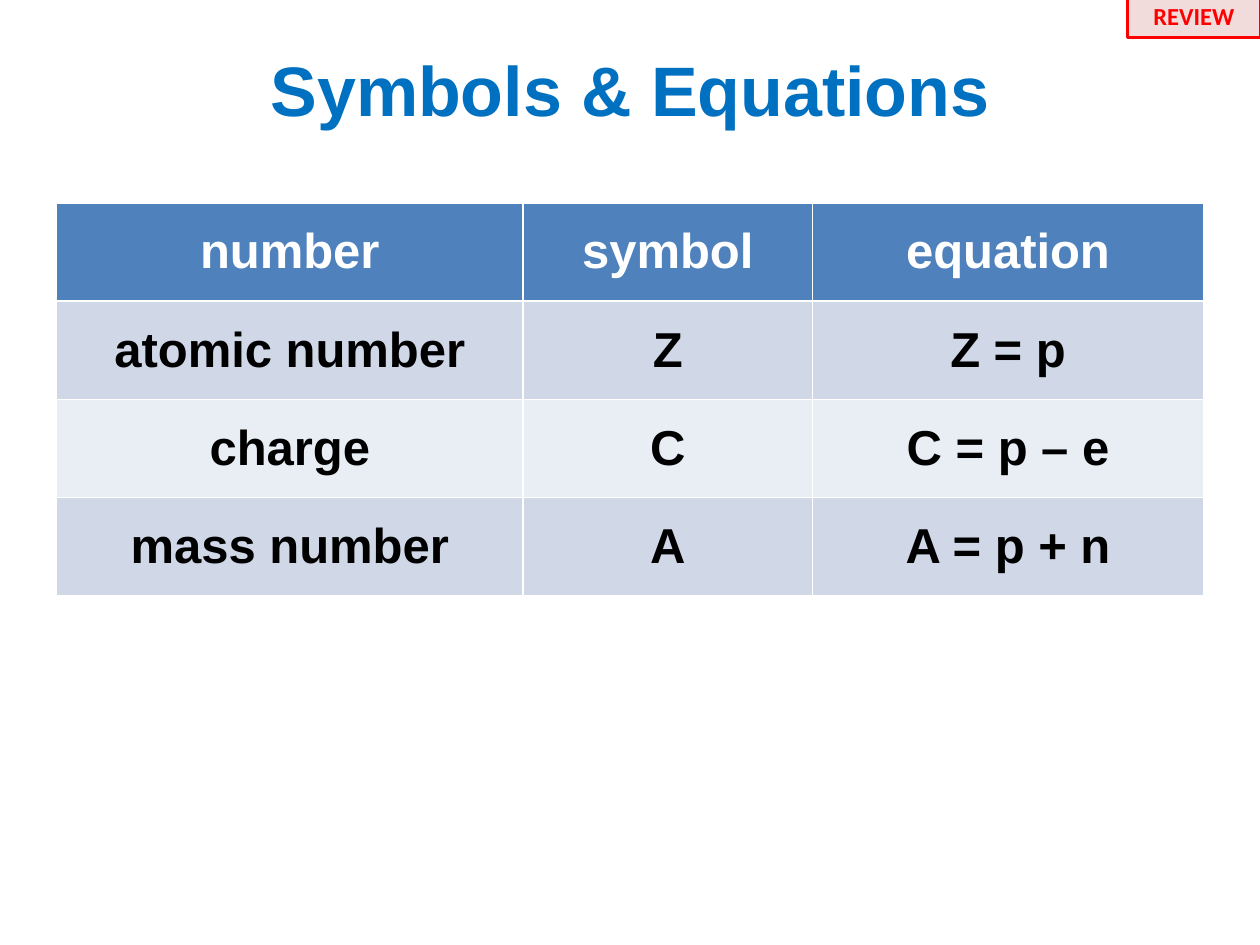
from pptx import Presentation
from pptx.dml.color import RGBColor
from pptx.enum.shapes import MSO_SHAPE
from pptx.enum.text import MSO_ANCHOR, PP_ALIGN
from pptx.util import Inches, Pt

WHITE = RGBColor(0xFF, 0xFF, 0xFF)
BLACK = RGBColor(0x00, 0x00, 0x00)
TITLE_BLUE = RGBColor(0x00, 0x70, 0xC0)
HEADER_BLUE = RGBColor(0x4F, 0x81, 0xBD)
BAND_DARK = RGBColor(0xD0, 0xD8, 0xE8)
BAND_LIGHT = RGBColor(0xE9, 0xED, 0xF4)
RED = RGBColor(0xFF, 0x00, 0x00)
PINK = RGBColor(0xF2, 0xDC, 0xDB)

ROWS = [
    ("number", "symbol", "equation"),
    ("atomic number", "Z", "Z = p"),
    ("charge", "C", "C = p – e"),
    ("mass number", "A", "A = p + n"),
]
COLUMN_WIDTHS = (3.7, 2.3, 3.1)
ROW_HEIGHT = 0.78


class SlideBuilder:
    """Holds the text style and the current slide, and adds each kind of element."""

    def __init__(self, slide, font="Arial"):
        self.slide = slide
        self.font = font

    def add_words(self, frame, text, size, color, font=None):
        paragraph = frame.paragraphs[0]
        paragraph.alignment = PP_ALIGN.CENTER
        run = paragraph.add_run()
        run.text = text
        run.font.name = font or self.font
        run.font.size = Pt(size)
        run.font.bold = True
        run.font.color.rgb = color

    def title(self, text, left, top, width, height):
        heading = self.slide.shapes.add_textbox(
            Inches(left), Inches(top), Inches(width), Inches(height))
        frame = heading.text_frame
        frame.word_wrap = True
        frame.vertical_anchor = MSO_ANCHOR.MIDDLE
        self.add_words(frame, text, 40, TITLE_BLUE)

    def table(self, rows, widths, row_height, left, top):
        grid = self.slide.shapes.add_table(
            len(rows), len(widths), Inches(left), Inches(top),
            Inches(sum(widths)), Inches(row_height * len(rows))).table
        for column, width in zip(grid.columns, widths):
            column.width = Inches(width)
        for r, entries in enumerate(rows):
            band = BAND_DARK if r % 2 else BAND_LIGHT
            for c, entry in enumerate(entries):
                cell = grid.cell(r, c)
                cell.vertical_anchor = MSO_ANCHOR.MIDDLE
                cell.fill.solid()
                cell.fill.fore_color.rgb = band if r else HEADER_BLUE
                self.add_words(cell.text_frame, entry, 28, BLACK if r else WHITE)

    def tag(self, text, left, top, width, height):
        label = self.slide.shapes.add_shape(
            MSO_SHAPE.RECTANGLE, Inches(left), Inches(top), Inches(width), Inches(height))
        label.shadow.inherit = False
        label.fill.solid()
        label.fill.fore_color.rgb = PINK
        label.line.color.rgb = RED
        label.line.width = Pt(1.5)
        label.text_frame.vertical_anchor = MSO_ANCHOR.TOP
        self.add_words(label.text_frame, text, 14, RED, "Calibri")


def main():
    presentation = Presentation()
    presentation.slide_width = Inches(10)
    presentation.slide_height = Inches(7.5)
    builder = SlideBuilder(presentation.slides.add_slide(presentation.slide_layouts[6]))
    builder.title("Symbols & Equations", 0.2, 0.3, 9.6, 0.8)
    builder.table(ROWS, COLUMN_WIDTHS, ROW_HEIGHT, 0.45, 1.61)
    builder.tag("REVIEW", 8.95, -0.04, 1.05, 0.34)
    presentation.save("out.pptx")


if __name__ == "__main__":
    main()
